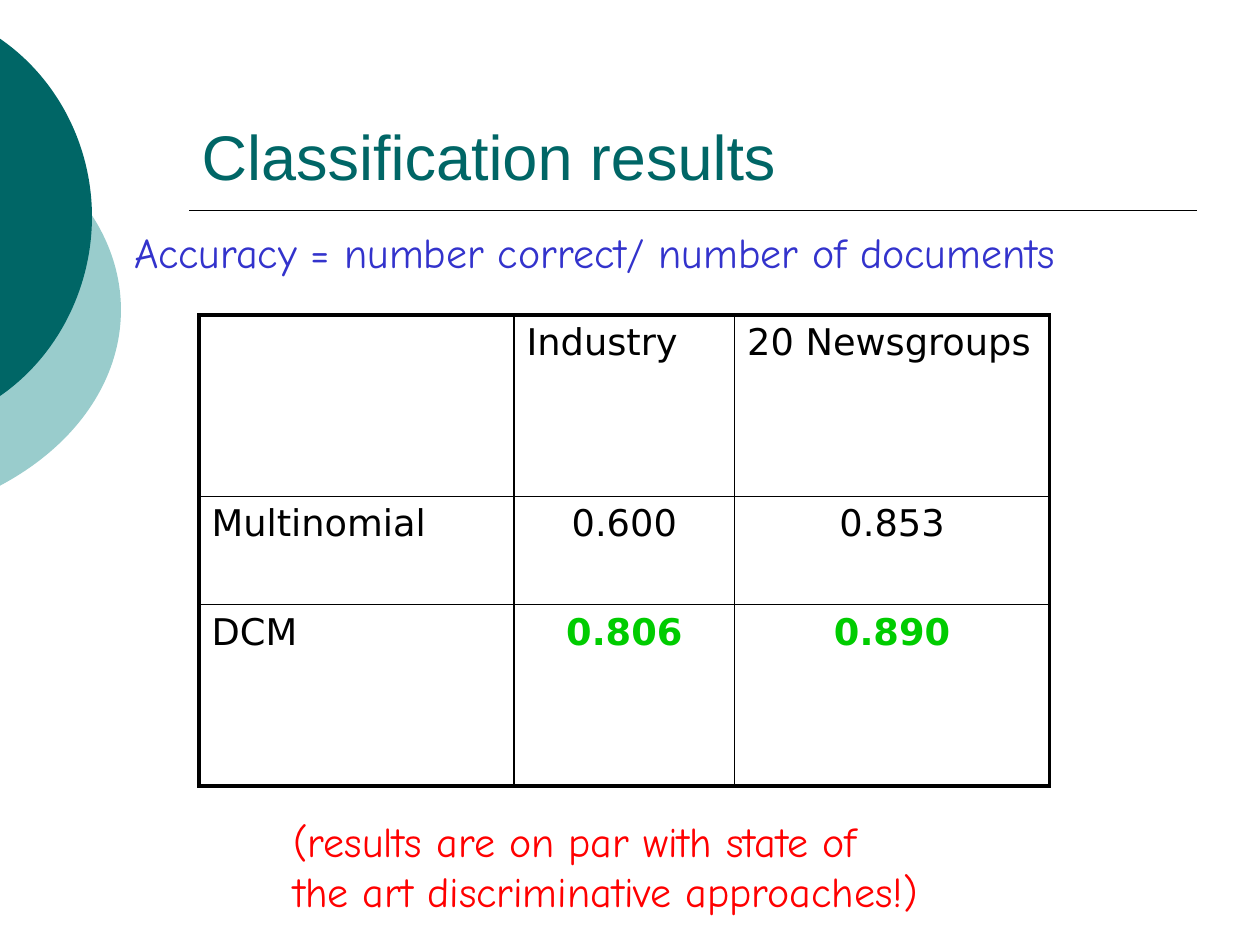
import pptx
import pptx.dml.color
import pptx.enum.shapes
import pptx.enum.text
import pptx.oxml
import pptx.oxml.ns
import pptx.util

IN = pptx.util.Inches
ALIGN = pptx.enum.text.PP_ALIGN
NS = pptx.oxml.ns.nsdecls("a")
COLS = [2.5, 1.75, 2.5]
ROWS = [1.44, 0.86, 1.44]
RESULTS = [
    ["", "Industry", "20 Newsgroups"],
    ["Multinomial", "0.600", "0.853"],
    ["DCM", "0.806", "0.890"],
]


def rgb(value):
    return pptx.dml.color.RGBColor.from_string(value)


def format_text(tf, font, size, color, align=ALIGN.LEFT, bold=False):
    for p in tf.paragraphs:
        p.alignment = align
        for f in [p.font] + [r.font for r in p.runs]:
            f.name, f.size, f.bold = font, pptx.util.Pt(size), bold
            f.color.rgb = rgb(color)


def add_edge_disc(s, frame, top, middle, bottom, reach, shoulder, color):
    x, y, width, height = frame
    start, tip, end = (-0.01, top), (reach, middle), (-0.01, bottom)
    curves = [
        [(shoulder, top + 0.32), (reach, middle - 0.56), tip],
        [(reach, middle + 0.56), (shoulder, bottom - 0.32), end],
    ]
    builder = s.shapes.build_freeform(*map(IN, start))
    builder.add_line_segments([tuple(map(IN, q)) for q in (tip, end)], close=True)
    sp = builder.convert_to_shape()
    sp.left, sp.top, sp.width, sp.height = map(IN, frame)
    path = sp._element.spPr.find(".//" + pptx.oxml.ns.qn("a:path"))

    def point(q):
        return f'<a:pt x="{IN(q[0] - x)}" y="{IN(q[1] - y)}"/>'

    arcs = "".join(f'<a:cubicBezTo>{"".join(map(point, curve))}</a:cubicBezTo>' for curve in curves)
    path.getparent().replace(path, pptx.oxml.parse_xml(
        f'<a:path {NS} w="{IN(width)}" h="{IN(height)}">'
        f'<a:moveTo>{point(start)}</a:moveTo>{arcs}<a:close/></a:path>'))
    sp.shadow.inherit = False
    sp.fill.solid()
    sp.fill.fore_color.rgb = rgb(color)
    sp.line.fill.background()


def add_rule(s, x1, x2, y):
    line = s.shapes.add_connector(pptx.enum.shapes.MSO_CONNECTOR.STRAIGHT, IN(x1), IN(y), IN(x2), IN(y))
    line.line.color.rgb = rgb("000000")
    line.line.width = pptx.util.Pt(1)
    line._element.spPr.append(pptx.oxml.parse_xml(f'<a:effectLst {NS}/>'))


def set_title(s, text):
    sp = s.shapes.title
    sp.left, sp.top, sp.width, sp.height = IN(1.5), IN(0.33), IN(8), IN(1.25)
    tf = sp.text_frame
    tf.text = text
    tf.word_wrap = True
    tf.vertical_anchor = pptx.enum.text.MSO_ANCHOR.BOTTOM
    format_text(tf, "Arial", 36, "006666")


def add_note(s, box, text, color, align=ALIGN.LEFT):
    tf = s.shapes.add_textbox(*map(IN, box)).text_frame
    tf.text = text
    tf.word_wrap = False
    tf.auto_size = pptx.enum.text.MSO_AUTO_SIZE.SHAPE_TO_FIT_TEXT
    format_text(tf, "Comic Neue", 24, color, align)


def set_borders(cell, widths):
    tcPr = cell._tc.get_or_add_tcPr()
    for i, (side, width) in enumerate(zip("LRTB", widths)):
        tcPr.insert(i, pptx.oxml.parse_xml(
            f'<a:ln{side} {NS} w="{pptx.util.Pt(width)}">'
            f'<a:solidFill><a:srgbClr val="000000"/></a:solidFill></a:ln{side}>'))


def add_results(s):
    last_row, last_col = len(ROWS) - 1, len(COLS) - 1
    table = s.shapes.add_table(len(ROWS), len(COLS), IN(1.58), IN(2.5),
                               IN(sum(COLS)), IN(sum(ROWS))).table
    table.first_row = table.horz_banding = False
    for column, width in zip(table.columns, COLS):
        column.width = IN(width)
    for row, height in zip(table.rows, ROWS):
        row.height = IN(height)
    for i, values in enumerate(RESULTS):
        for j, value in enumerate(values):
            cell = table.cell(i, j)
            cell.text_frame.text = value
            cell.fill.background()
            number, best = i > 0 and j > 0, i == last_row and j > 0
            format_text(cell.text_frame, "DejaVu Sans", 21, "00CC00" if best else "000000",
                        ALIGN.CENTER if number else ALIGN.LEFT, best)
            outer = (j == 0, j == last_col, i == 0, i == last_row)
            set_borders(cell, [2.25 if edge else 1 for edge in outer])


def main():
    prs = pptx.Presentation()
    prs.slide_width, prs.slide_height = IN(10), IN(7.5)
    s = prs.slides.add_slide(prs.slide_layouts[5])
    add_edge_disc(s, (-3.54, 0.75, 4.5, 3.42), 1.06, 2.46, 3.86, 0.96, 0.6, "99CCCC")
    add_edge_disc(s, (-2.65, 0, 3.38, 3.45), 0.3, 1.72, 3.15, 0.73, 0.46, "006666")
    add_rule(s, 1.5, 9.5, 1.67)
    set_title(s, "Classification results")
    add_results(s)
    add_note(s, (0.96, 1.75, 7.51, 0.5), "Accuracy = number correct/ number of documents",
             "3333CC", ALIGN.RIGHT)
    add_note(s, (2.23, 6.42, 5.69, 0.91),
             "(results are on par with state of \vthe art discriminative approaches!)", "FF0000")
    prs.save("out.pptx")


if __name__ == "__main__":
    main()
